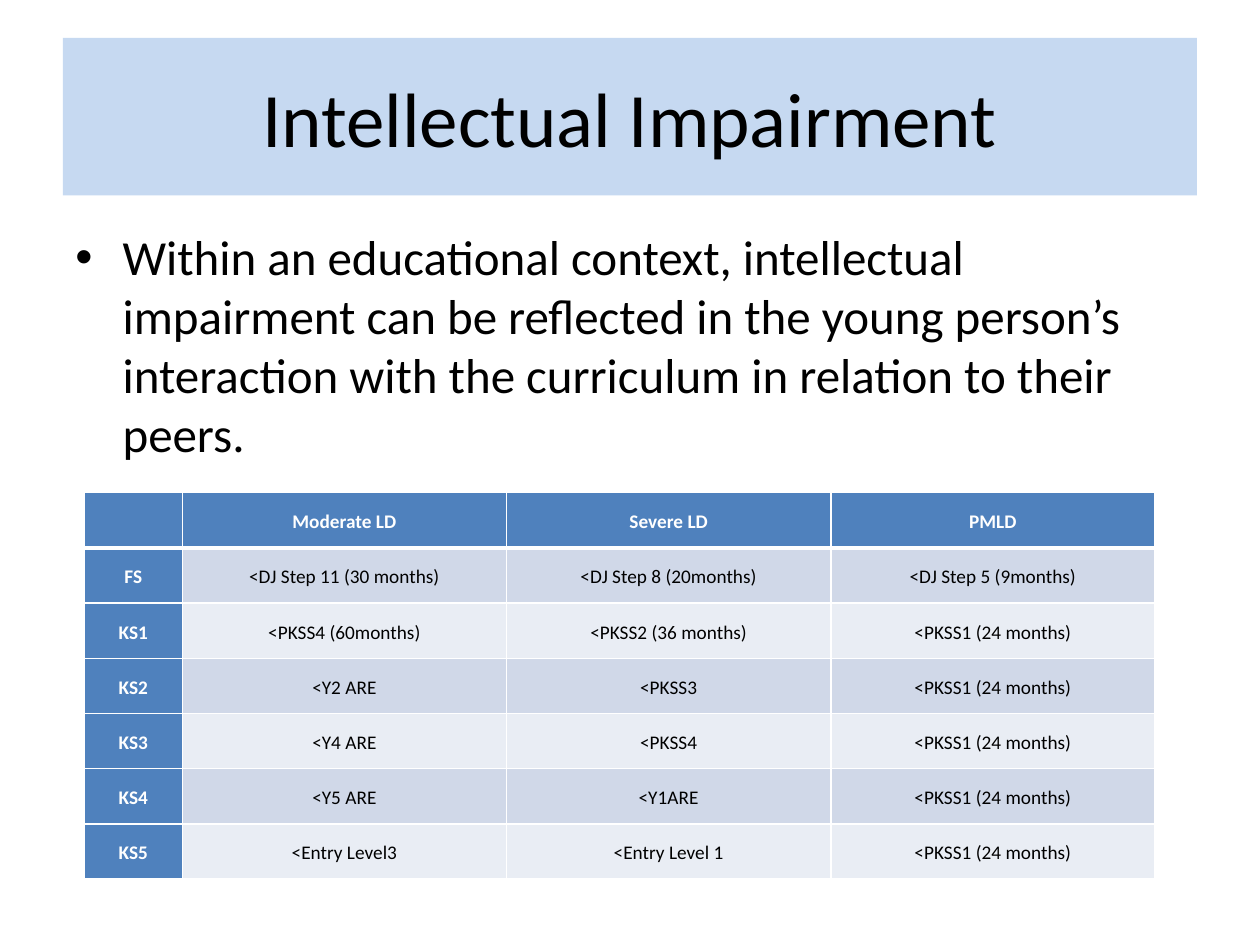
import pptx
import pptx.util
import pptx.dml.color
import pptx.enum.shapes
import pptx.enum.text
import pptx.oxml

Pt = pptx.util.Pt
ALIGN = pptx.enum.text.PP_ALIGN
ANCHOR = pptx.enum.text.MSO_ANCHOR

COLORS = {
    "banner": "C6D9F1",
    "header": "4F81BD",
    "odd_row": "D0D8E8",
    "even_row": "E9EDF4",
    "white": "FFFFFF",
    "black": "000000",
}

TITLE = "Intellectual Impairment"
STATEMENT = (
    "Within an educational context, intellectual impairment can be reflected in the "
    "young person’s interaction with the curriculum in relation to their peers."
)
LEVELS = [
    ["", "Moderate LD", "Severe LD", "PMLD"],
    ["FS", "<DJ Step 11 (30 months)", "<DJ Step 8 (20months)", "<DJ Step 5 (9months)"],
    ["KS1", "<PKSS4 (60months)", "<PKSS2 (36 months)", "<PKSS1 (24 months)"],
    ["KS2", "<Y2 ARE", "<PKSS3", "<PKSS1 (24 months)"],
    ["KS3", "<Y4 ARE", "<PKSS4", "<PKSS1 (24 months)"],
    ["KS4", "<Y5 ARE", "<Y1ARE", "<PKSS1 (24 months)"],
    ["KS5", "<Entry Level3", "<Entry Level 1", "<PKSS1 (24 months)"],
]


def rgb(name):
    return pptx.dml.color.RGBColor.from_string(COLORS[name])


def add_xml(parent, tag, content="", **attributes):
    """Append a DrawingML element to parent."""
    values = "".join(f' {key}="{value}"' for key, value in attributes.items())
    namespace = "http://schemas.openxmlformats.org/drawingml/2006/main"
    parent.append(pptx.oxml.parse_xml(
        f'<a:{tag} xmlns:a="{namespace}"{values}>{content}</a:{tag}>'))


class SlideBuilder:
    def __init__(self, slide, font="Calibri"):
        self.slide = slide
        self.font = font

    def add_run(self, para, text, size, color="black", bold=False):
        span = para.add_run()
        span.text = text
        span.font.name = self.font
        span.font.size = Pt(size)
        span.font.bold = bold
        span.font.color.rgb = rgb(color)

    def banner(self, text, left, top, width, height):
        box = self.slide.shapes.add_shape(
            pptx.enum.shapes.MSO_SHAPE.RECTANGLE,
            Pt(left), Pt(top), Pt(width), Pt(height))
        box.shadow.inherit = False
        box.fill.solid()
        box.fill.fore_color.rgb = rgb("banner")
        box.line.fill.background()
        box.text_frame.vertical_anchor = ANCHOR.MIDDLE
        para = box.text_frame.paragraphs[0]
        para.alignment = ALIGN.CENTER
        self.add_run(para, text, 44)

    def bullet(self, text, left, top, width, height, size=28, indent=27):
        box = self.slide.shapes.add_textbox(Pt(left), Pt(top), Pt(width), Pt(height))
        box.text_frame.word_wrap = True
        para = box.text_frame.paragraphs[0]
        para.space_before = Pt(0.2 * size)
        properties = para._p.get_or_add_pPr()
        properties.set("marL", str(Pt(indent)))
        properties.set("indent", str(Pt(-indent)))
        add_xml(properties, "buFont", typeface="Arial")
        add_xml(properties, "buChar", char="•")
        self.add_run(para, text, size)

    def table(self, rows, left, top, widths, row_height):
        frame = self.slide.shapes.add_table(
            len(rows), len(widths), Pt(left), Pt(top),
            Pt(sum(widths)), Pt(row_height * len(rows)))
        grid = frame.table
        for column, width in zip(grid.columns, widths):
            column.width = Pt(width)
        for row_index, texts in enumerate(rows):
            grid.rows[row_index].height = Pt(row_height)
            for column_index, text in enumerate(texts):
                self.cell(grid.cell(row_index, column_index), text, row_index, column_index)

    def cell(self, cell, text, row_index, column_index):
        is_header = row_index == 0 or column_index == 0
        self.borders(cell, top=3 if row_index == 1 else 1, bottom=3 if row_index == 0 else 1)
        cell.fill.solid()
        band = "odd_row" if row_index % 2 else "even_row"
        cell.fill.fore_color.rgb = rgb("header" if is_header else band)
        cell.vertical_anchor = ANCHOR.MIDDLE
        cell.margin_left = cell.margin_right = Pt(5)
        cell.margin_top = cell.margin_bottom = Pt(0)
        para = cell.text_frame.paragraphs[0]
        para.alignment = ALIGN.CENTER
        para.line_spacing = 1.15
        if text:
            self.add_run(para, text, 11, "white" if is_header else "black", is_header)

    def borders(self, cell, top, bottom):
        properties = cell._tc.get_or_add_tcPr()
        fill = f'<a:solidFill><a:srgbClr val="{COLORS["white"]}"/></a:solidFill>'
        for tag, width in (("lnL", 1), ("lnR", 1), ("lnT", top), ("lnB", bottom)):
            add_xml(properties, tag, fill, w=Pt(width))


def main():
    deck = pptx.Presentation()
    deck.slide_width, deck.slide_height = Pt(720), Pt(540)
    page = SlideBuilder(deck.slides.add_slide(deck.slide_layouts[6]))
    page.banner(TITLE, 36, 21.6, 648, 90)
    page.bullet(STATEMENT, 36, 126, 648, 356.4)
    page.table(LEVELS, 48.2, 281.5, [56, 185.3, 185.3, 185.3], 31.55)
    deck.save("out.pptx")


if __name__ == "__main__":
    main()
